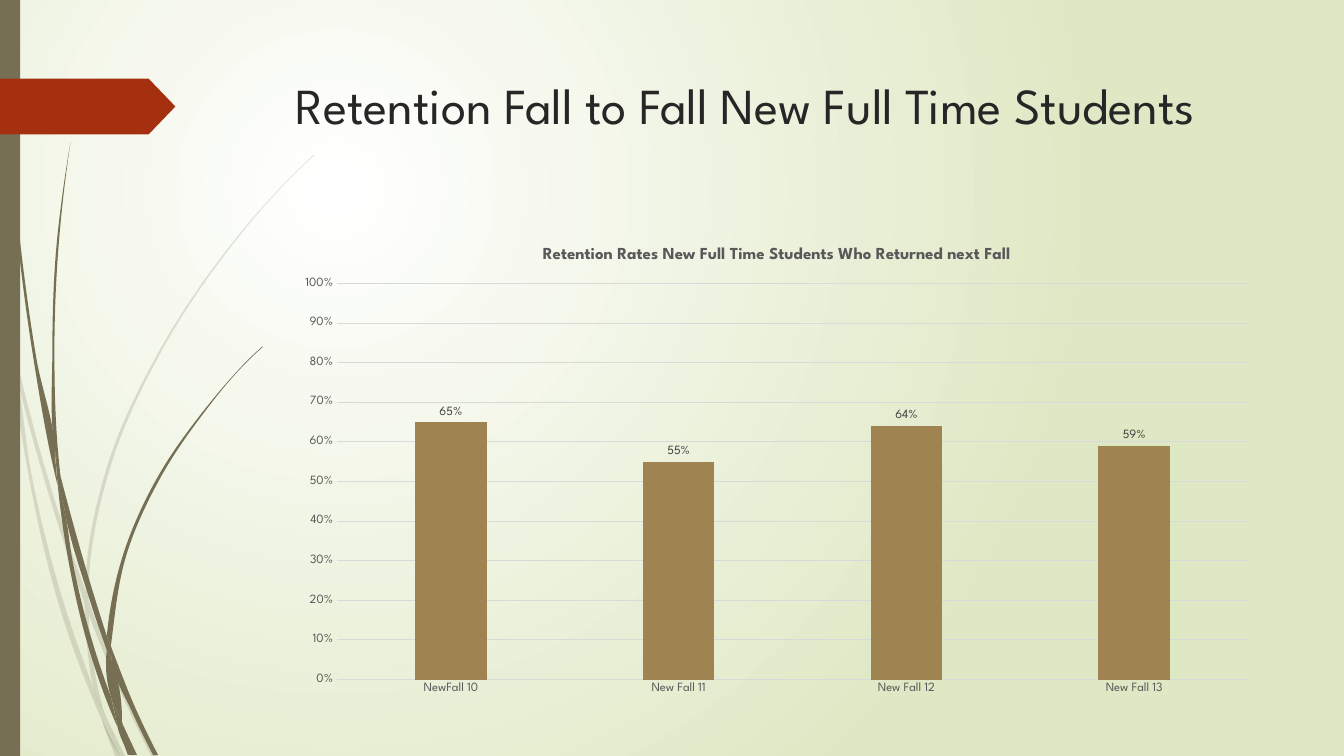
import math

import pptx
import pptx.chart.data
import pptx.dml.color
import pptx.enum.chart
import pptx.enum.shapes
import pptx.enum.text
import pptx.oxml
import pptx.oxml.ns
import pptx.util

Pt = pptx.util.Pt
RGBColor = pptx.dml.color.RGBColor
qn = pptx.oxml.ns.qn
nsdecls = pptx.oxml.ns.nsdecls

TITLE = "Retention Fall to Fall New Full Time Students"
CHART_TITLE = "Retention Rates New Full Time Students Who Returned next Fall"
RATES = {"NewFall 10": 0.65, "New Fall 11": 0.55, "New Fall 12": 0.64, "New Fall 13": 0.59}
FONT = "League Spartan"

WHITE = RGBColor(0xFF, 0xFF, 0xFF)
PALE_GREEN = RGBColor(0xDF, 0xE8, 0xC4)
OLIVE = RGBColor(0x76, 0x6F, 0x54)
RUST = RGBColor(0xA5, 0x30, 0x10)
TAN = RGBColor(0x9F, 0x83, 0x51)
TITLE_INK = RGBColor(0x26, 0x26, 0x26)
LABEL_INK = RGBColor(0x40, 0x40, 0x40)
AXIS_INK = RGBColor(0x59, 0x59, 0x59)
GRID_GREY = RGBColor(0xD9, 0xD9, 0xD9)

SLIDE_WIDTH, SLIDE_HEIGHT = 960, 540
TITLE_BOX = (204, 49, 702, 100.8)
CHART_BOX = (204, 162.7, 702, 341.3)
PLOT_BOX = (240.7, 202.5, 650.8, 283)

FAINT_BLADES = [
    [[(7.9, 252), (6.5, 231.8), (0, 203)], [(0, 215.3), (7.2, 247.7)]],
    [[(12.2, 270.7), (41.8, 375.8), (60.5, 431.3)], [(61.2, 421.9), (44.6, 374.4), (10.1, 248.4)]],
    [[(63.4, 439.2), (88.6, 499.7), (108, 540)],
     [(111.6, 540), (91.4, 498.2), (66.2, 437), (63.4, 429.1)]],
    [[(85.7, 540), (89.3, 540)], [(75.6, 511.9)]],
    [[(67, 491.8), (50.4, 445.7), (22.3, 337.7), (12.2, 270.7), (7.9, 252)],
     [(7.9, 252), (20.2, 338.4), (46.8, 447.1), (66.2, 499), (72.7, 514.1)], [(71.3, 509)]],
    [[(60.5, 431.3), (62.6, 465.1), (67, 491.8), (69.1, 498.2), (75.6, 511.9)],
     [(74.2, 508.3), (65.5, 465.1), (63.4, 439.2), (63.4, 437.8)]],
    [[(63.4, 429.1), (63.4, 420.5), (79.2, 332.6), (115.2, 251.3), (164.9, 176.4), (193, 142.6),
      (208.8, 126), (224.6, 110.9)],
     [(224.6, 110.2), (208.1, 126), (193, 141.8), (164.2, 175.7), (113.8, 250.6), (77, 331.9),
      (61.2, 420.5), (61.2, 421.9)]],
    [[(72.7, 514.1), (82.1, 540)], [(85.7, 540)]],
    [[(63.4, 437.8), (63.4, 429.1)], [(61.2, 421.9), (60.5, 431.3)]],
    [[(67, 491.8), (71.3, 509), (72.7, 514.1), (85.7, 540)],
     [(75.6, 511.9), (69.1, 498.2)]],
]
DARK_BLADES = [
    [[(2.2, 0), (2.9, 34.6), (5, 79.2), (12.2, 167.8), (23.8, 255.6), (40.3, 343.4), (41, 346.3)],
     [(39.6, 329), (39.6, 326.2), (25.9, 255.6), (13.7, 167), (5.8, 78.5), (3.6, 34.6), (2.9, 0)]],
    [[(43.2, 339.8), (46.1, 363.6), (63.4, 426.2), (76.3, 464.4)],
     [(76.3, 454.3), (67, 424.8), (43.2, 339.8)]],
    [[(79.2, 461.5), (79.9, 472.3), (95, 509.8), (109.4, 539.3)],
     [(113, 539.3), (97.9, 508.3), (81.4, 467.3), (79.2, 461.5)]],
    [[(79.2, 497.5), (70.6, 473), (51.8, 400.3), (46.1, 363.6), (41, 343.4)],
     [(41, 343.4), (49, 401), (67, 474.5), (79.9, 509.8), (84.2, 519.8)], [(83.5, 516.2)]],
    [[(43.2, 339.8), (41.8, 326.2), (38.9, 251.3), (41.8, 176.4), (45.4, 139), (50.4, 101.5)],
     [(50.4, 101.5), (44.6, 139), (40.3, 176.4), (37.4, 251.3), (39.6, 323.3), (43.2, 339.8)]],
    [[(95.8, 539.3), (97.9, 539.3)], [(87.8, 517.7)]],
    [[(41, 343.4), (46.1, 363.6)], [(43.2, 339.8), (39.6, 323.3)], [(39.6, 326.2)]],
    [[(79.2, 461.5), (79.9, 455.8), (90, 397.4), (113.8, 342.7), (147.6, 292.3), (166.3, 269.3),
      (176.4, 258.5), (187.9, 247.7)],
     [(187.2, 247.7), (176.4, 257.8), (166.3, 268.6), (146.9, 291.6), (112.3, 341.3),
      (87.8, 396.7), (76.3, 454.3)]],
    [[(84.2, 519.8), (91.4, 539.3)], [(94.3, 539.3)]],
    [[(76.3, 464.4), (79.2, 497.5), (83.5, 508.3), (87.8, 517.7)],
     [(87.1, 515.5), (79.9, 472.3), (78.5, 468.7)]],
    [[(76.3, 464.4), (78.5, 468.7), (79.9, 472.3)], [(79.2, 461.5), (76.3, 454.3)]],
    [[(79.2, 497.5), (83.5, 516.2), (84.2, 519.8), (93.6, 539.3)],
     [(95.8, 539.3), (87.8, 517.7), (83.5, 508.3)]],
]


def edge_curves(knots):
    spans = list(zip(knots, knots[1:]))
    lengths = [math.dist(*span) for span in spans]
    slopes = [[(b - a) / length for a, b in zip(*span)] for span, length in zip(spans, lengths)]
    tangents = [[(h1 * a + h0 * b) / (h0 + h1) for a, b in zip(s0, s1)]
                for h0, h1, s0, s1 in zip(lengths, lengths[1:], slopes, slopes[1:])]
    inner = tangents or slopes
    first = [2 * s - t for s, t in zip(slopes[0], inner[0])]
    last = [2 * s - t for s, t in zip(slopes[-1], inner[-1])]
    tangents = [first, *tangents, last]
    return [([p + t * length / 3 for p, t in zip(start, leaving)],
             [p - t * length / 3 for p, t in zip(end, arriving)], end)
            for (start, end), length, leaving, arriving
            in zip(spans, lengths, tangents, tangents[1:])]


def paint(shape, color):
    shape.shadow.inherit = False
    shape.fill.solid()
    shape.fill.fore_color.rgb = color
    shape.line.fill.background()


def add_blade(slide, edges, opacity):
    outline = [(Pt(x), Pt(y)) for edge in edges for x, y in edge]
    builder = slide.shapes.build_freeform(*outline[0])
    builder.add_line_segments(outline[1:], close=True)
    blade = builder.convert_to_shape()
    paint(blade, OLIVE)
    curves = []
    for edge in edges:
        curves += [None] + (edge_curves(edge) if len(edge) > 1 else [])
    lines = list(blade.element.iter(qn("a:lnTo")))
    for line, curve in zip(lines, curves[1:]):
        if curve:
            points = "".join(f'<a:pt x="{Pt(x) - blade.left}" y="{Pt(y) - blade.top}"/>'
                             for x, y in curve)
            line.getparent().replace(line, pptx.oxml.parse_xml(
                f'<a:cubicBezTo {nsdecls("a")}>{points}</a:cubicBezTo>'))
    if opacity < 100:
        color = blade.element.find(".//" + qn("a:srgbClr"))
        color.append(pptx.oxml.parse_xml(
            f'<a:alpha {nsdecls("a")} val="{opacity * 1000}"/>'))


def style_font(font, size, color, bold=False):
    font.name, font.size, font.bold = FONT, Pt(size), bold
    font.color.rgb = color


def fill_background(slide):
    fill = slide.background.fill
    fill.gradient()
    for stop, color, position in zip(fill.gradient_stops, (WHITE, PALE_GREEN), (0, 1)):
        stop.color.rgb = color
        stop.position = position
    linear = slide.element.find(".//" + qn("a:lin"))
    linear.getparent().replace(linear, pptx.oxml.parse_xml(
        f'<a:path {nsdecls("a")} path="circle">'
        '<a:fillToRect l="50000" t="50000" r="100000" b="100000"/></a:path>'))


def add_decoration(slide):
    content = list(slide.shapes)
    for blades, opacity in ((FAINT_BLADES, 20), (DARK_BLADES, 100)):
        for edges in blades:
            add_blade(slide, edges, opacity)
    kinds = pptx.enum.shapes.MSO_SHAPE
    paint(slide.shapes.add_shape(kinds.RECTANGLE, 0, 0, Pt(14.4), Pt(SLIDE_HEIGHT)), OLIVE)
    arrow = slide.shapes.add_shape(kinds.PENTAGON, 0, Pt(56.2), Pt(125.3), Pt(39.8))
    arrow.adjustments[0] = 0.48
    paint(arrow, RUST)
    layout_tree = slide.slide_layout.shapes.element
    for shape in list(slide.shapes)[len(content):]:
        shape.element.find(".//" + qn("p:cNvPr")).set("id", str(shape.shape_id + 100))
        layout_tree.append(shape.element)


def fill_title(slide):
    title = slide.shapes.title
    title.left, title.top, title.width, title.height = map(Pt, TITLE_BOX)
    frame = title.text_frame
    frame.word_wrap = True
    frame.vertical_anchor = pptx.enum.text.MSO_ANCHOR.TOP
    paragraph = frame.paragraphs[0]
    paragraph.alignment = pptx.enum.text.PP_ALIGN.LEFT
    run = paragraph.add_run()
    run.text = TITLE
    style_font(run.font, 36, TITLE_INK)


def place_plot(chart):
    left, top, width, height = CHART_BOX
    x, y, w, h = PLOT_BOX
    shares = {"x": (x - left) / width, "y": (y - top) / height, "w": w / width, "h": h / height}
    area = chart.element.find(".//" + qn("c:plotArea")) if hasattr(chart, "element") \
        else chart._chartSpace.find(".//" + qn("c:plotArea"))
    for layout in area.findall(qn("c:layout")):
        area.remove(layout)
    sizes = "".join(f'<c:{name} val="{share:.4f}"/>' for name, share in shares.items())
    area.insert(0, pptx.oxml.parse_xml(
        f'<c:layout {nsdecls("c")}><c:manualLayout><c:layoutTarget val="inner"/>'
        f'<c:xMode val="edge"/><c:yMode val="edge"/>{sizes}</c:manualLayout></c:layout>'))


def add_retention_chart(slide):
    data = pptx.chart.data.CategoryChartData(number_format="0%")
    data.categories = list(RATES)
    data.add_series("Series 1", list(RATES.values()))
    chart = slide.shapes.add_chart(
        pptx.enum.chart.XL_CHART_TYPE.COLUMN_CLUSTERED, *map(Pt, CHART_BOX), data).chart
    style_font(chart.font, 10, AXIS_INK)
    chart.has_legend = False
    chart.has_title = True
    run = chart.chart_title.text_frame.paragraphs[0].add_run()
    run.text = CHART_TITLE
    style_font(run.font, 12, AXIS_INK, bold=True)
    for axis in (chart.category_axis, chart.value_axis):
        axis.major_tick_mark = axis.minor_tick_mark = pptx.enum.chart.XL_TICK_MARK.NONE
        style_font(axis.tick_labels.font, 9, AXIS_INK)
    values = chart.value_axis
    values.minimum_scale, values.maximum_scale, values.major_unit = 0, 1, 0.1
    values.format.line.fill.background()
    for line in (chart.category_axis.format.line, values.major_gridlines.format.line):
        line.color.rgb = GRID_GREY
        line.width = Pt(0.75)
    plot = chart.plots[0]
    plot.vary_by_categories = False
    plot.gap_width, plot.overlap = 219, -27
    series = plot.series[0]
    series.format.fill.solid()
    series.format.fill.fore_color.rgb = TAN
    labels = series.data_labels
    labels.show_value = True
    labels.position = pptx.enum.chart.XL_LABEL_POSITION.OUTSIDE_END
    style_font(labels.font, 9, LABEL_INK)
    for numbers in (values.tick_labels, labels):
        numbers.number_format = "0%"
        numbers.number_format_is_linked = False
    place_plot(chart)


presentation = pptx.Presentation()
presentation.slide_width, presentation.slide_height = Pt(SLIDE_WIDTH), Pt(SLIDE_HEIGHT)
slide = presentation.slides.add_slide(presentation.slide_layouts[5])
fill_background(slide)
add_decoration(slide)
fill_title(slide)
add_retention_chart(slide)
presentation.save("out.pptx")
